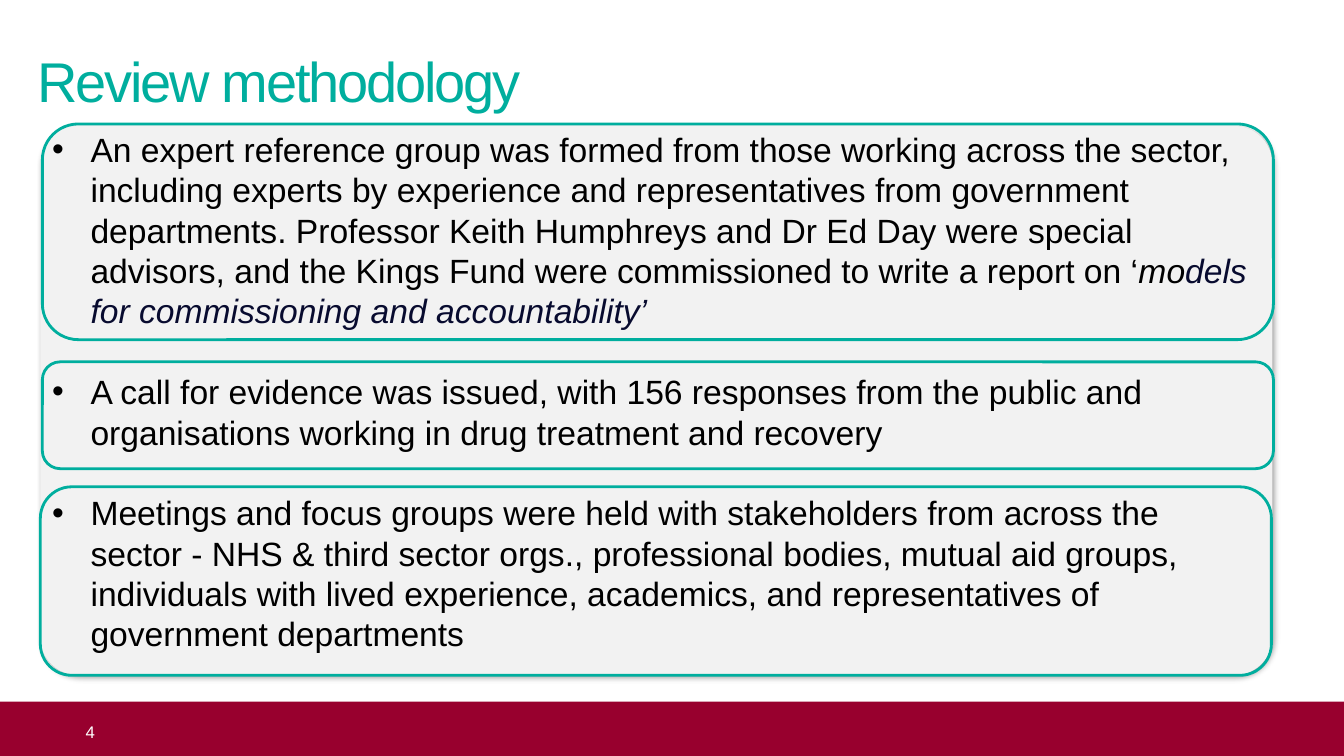
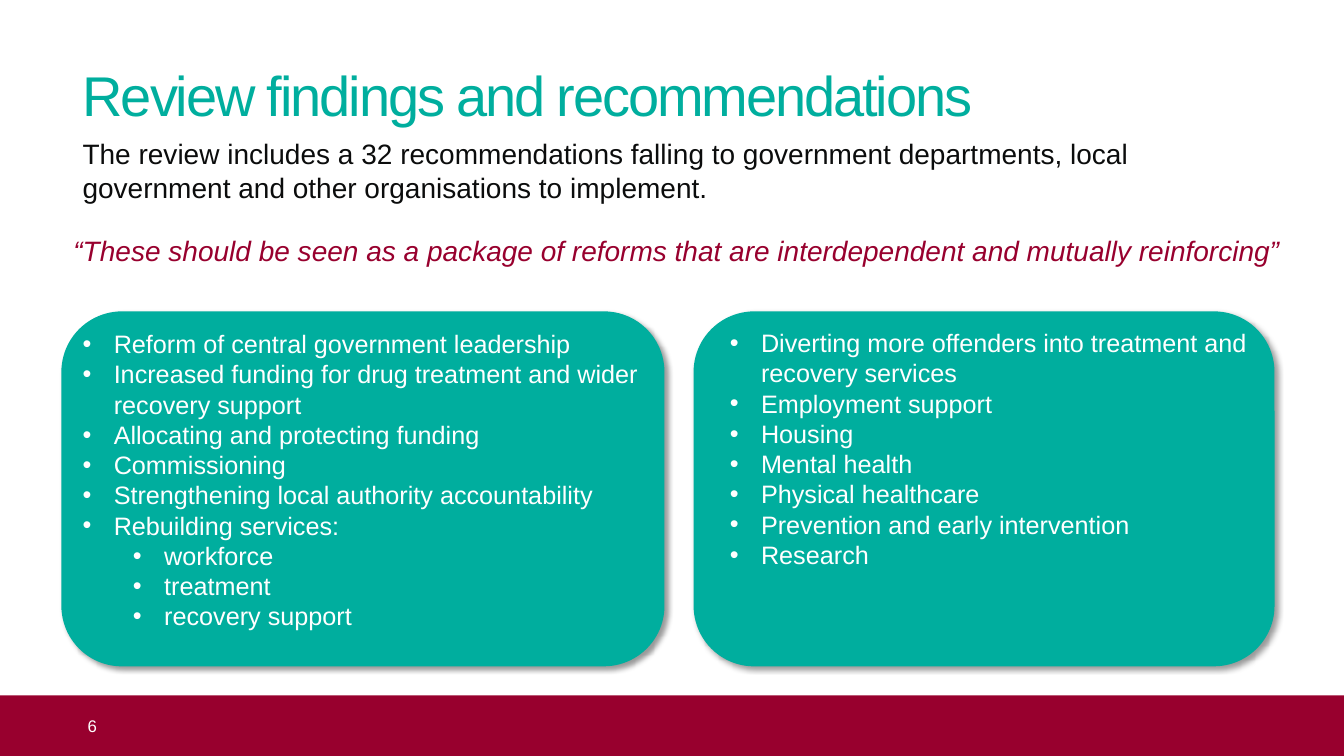
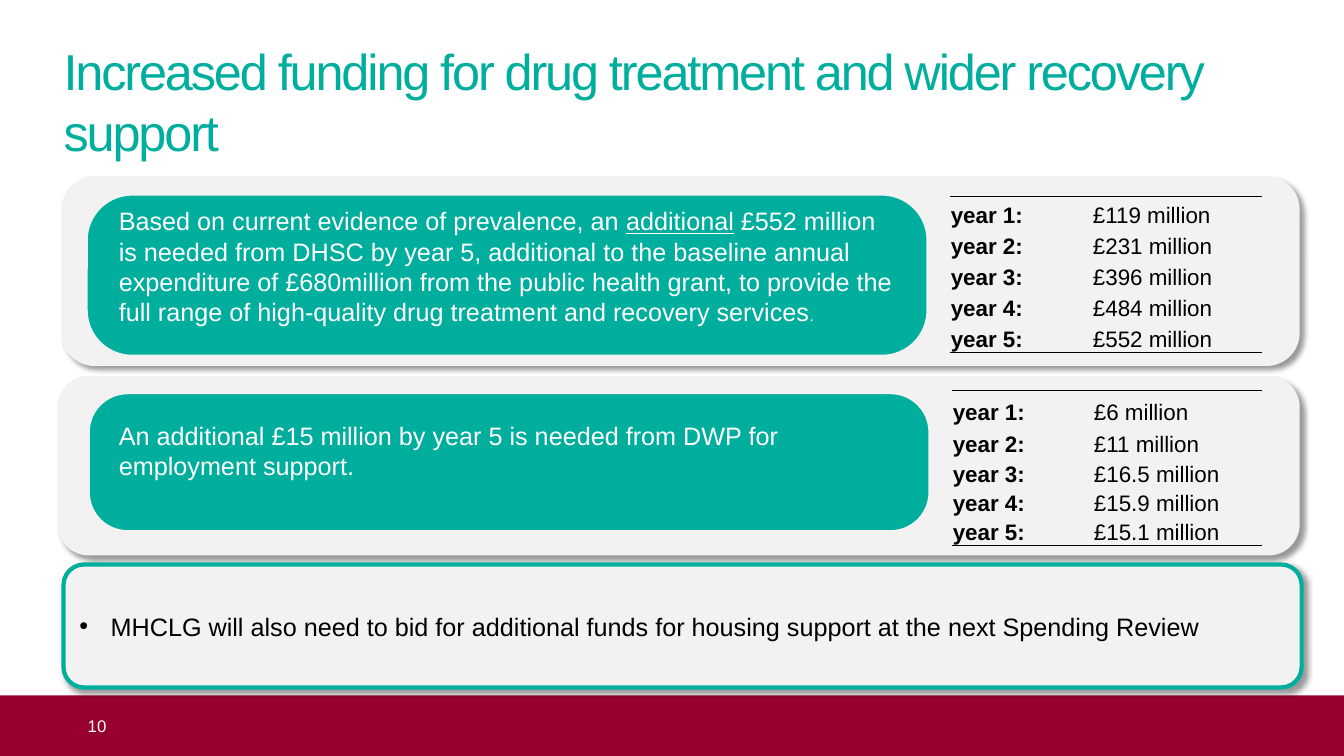
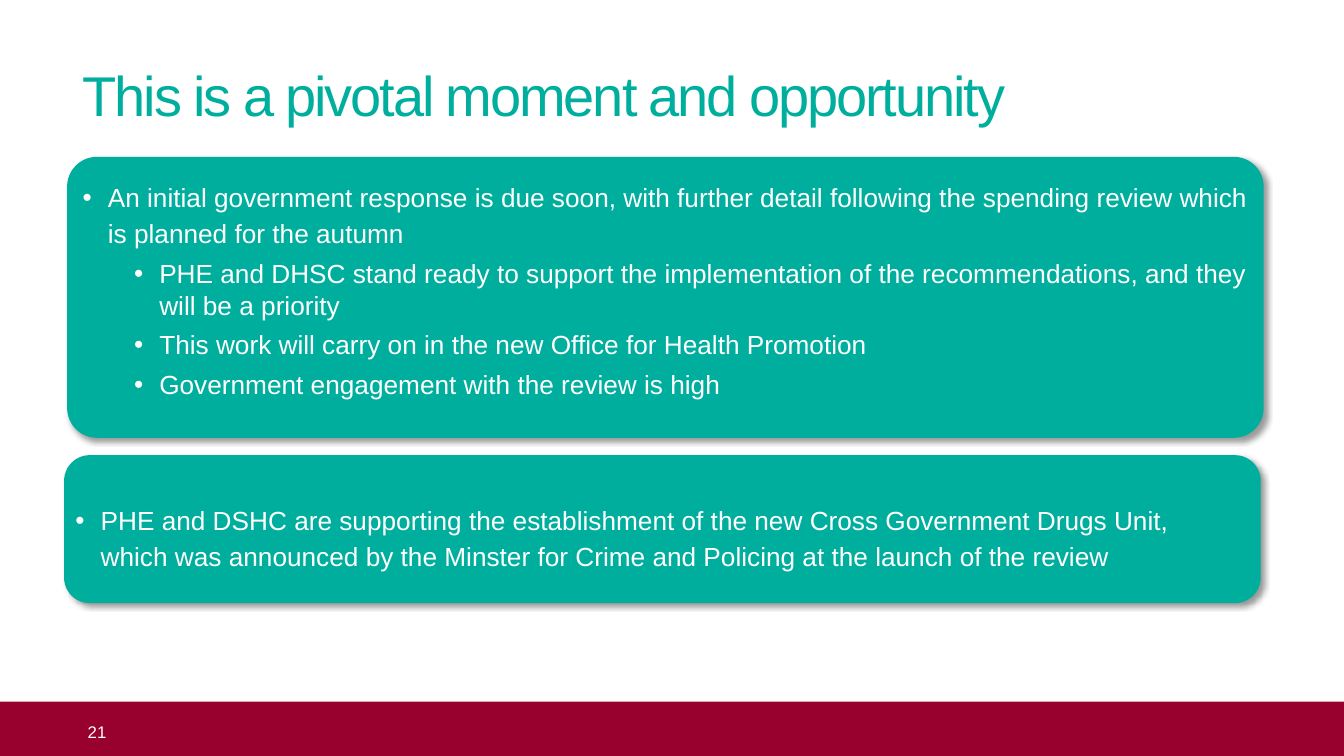
from dataclasses import dataclass
from typing import Optional, Sequence

from pptx import Presentation
from pptx.dml.color import RGBColor
from pptx.enum.shapes import MSO_SHAPE as Preset
from pptx.enum.text import MSO_ANCHOR as Anchor
from pptx.oxml.ns import qn
from pptx.oxml.xmlchemy import OxmlElement as new_element
from pptx.util import Emu, Pt

# Shared look; lengths are px, 100 to the inch
EMU_PER_PX = 9144
PAGE_WIDTH, PAGE_HEIGHT = 1333, 750
FONT = "Arial"
TEAL = RGBColor(0x00, 0xAE, 0x9E)
CRIMSON = RGBColor(0x98, 0x00, 0x2E)
PALE = RGBColor(0xF2, 0xF2, 0xF2)
WHITE = RGBColor(0xFF, 0xFF, 0xFF)
BLACK = RGBColor(0x00, 0x00, 0x00)
INK = RGBColor(0x0B, 0x0C, 0x0C)
NAVY = RGBColor(0x08, 0x0B, 0x2F)
DEFAULT_ROUNDING = 0.1667
TEXT_INSETS = (10, 5, 10, 5)
NO_INSETS = (0, 0, 0, 0)


@dataclass(frozen=True)
class Box:
    left: int
    top: int
    width: int
    height: int


@dataclass(frozen=True)
class Span:
    text: str
    color: Optional[RGBColor] = None
    size: Optional[float] = None
    bold: bool = False
    italic: bool = False
    underline: bool = False
    tracking: float = 0


@dataclass(frozen=True)
class Para:
    spans: Sequence[Span]
    size: float
    color: RGBColor
    indent: int = 0
    hanging: int = 0
    level: int = 0
    before: float = 0
    spacing: Optional[float] = None


@dataclass(frozen=True)
class Panel:
    box: Box
    fill: Optional[RGBColor] = None
    line: Optional[RGBColor] = None
    weight: float = 3
    rounding: float = DEFAULT_ROUNDING
    shadow: bool = False


def px(length: int) -> Emu:
    return Emu(length * EMU_PER_PX)


def place(box: Box) -> tuple:
    return px(box.left), px(box.top), px(box.width), px(box.height)


def child(parent, tag: str, **attributes):
    element = new_element(tag)
    for name, value in attributes.items():
        element.set(name, str(value))
    parent.append(element)
    return element


# Text
def write(frame, paras: Sequence[Para], insets=TEXT_INSETS, anchor=Anchor.TOP) -> None:
    frame.word_wrap = True
    frame.vertical_anchor = anchor
    (frame.margin_left, frame.margin_top,
     frame.margin_right, frame.margin_bottom) = map(px, insets)
    for index, para in enumerate(paras):
        target = frame.paragraphs[0] if index == 0 else frame.add_paragraph()
        write_para(target, para)


def write_para(target, para: Para) -> None:
    target.level = para.level
    target.space_before = Pt(para.before)
    if para.spacing:
        target.line_spacing = para.spacing
    properties = target._p.get_or_add_pPr()
    properties.set("algn", "l")
    properties.set("marL", str(px(para.indent)))
    properties.set("indent", str(-px(para.hanging)))
    if para.hanging:
        child(properties, "a:buFont", typeface=FONT)
        child(properties, "a:buChar", char="•")
    for span in para.spans:
        run = target.add_run()
        run.text = span.text
        font = run.font
        font.name = FONT
        font.size = Pt(span.size or para.size)
        font.color.rgb = span.color or para.color
        font.bold, font.italic, font.underline = span.bold, span.italic, span.underline
        if span.tracking:
            run._r.get_or_add_rPr().set("spc", str(round(span.tracking * 100)))


def add_text(page, box: Box, paras: Sequence[Para], insets=TEXT_INSETS,
             anchor=Anchor.TOP) -> None:
    write(page.shapes.add_textbox(*place(box)).text_frame, paras, insets, anchor)


# Shapes
def add_shadow(shape) -> None:
    effects = shape._element.spPr.find(qn("a:effectLst"))
    outer = child(effects, "a:outerShdw", blurRad=Pt(4), dist=Pt(3),
                  dir=45 * 60000, algn="tl", rotWithShape=0)
    child(child(outer, "a:srgbClr", val=BLACK), "a:alpha", val=40000)


def add_panel(page, panel: Panel):
    shape = page.shapes.add_shape(Preset.ROUNDED_RECTANGLE, *place(panel.box))
    shape.adjustments[0] = panel.rounding
    if panel.fill is None:
        shape.fill.background()
    else:
        shape.fill.solid()
        shape.fill.fore_color.rgb = panel.fill
    if panel.line is None:
        shape.line.fill.background()
    else:
        shape.line.color.rgb = panel.line
        shape.line.width = Pt(panel.weight)
    shape.shadow.inherit = False
    if panel.shadow:
        add_shadow(shape)
    return shape


def add_title(page, text: str, left: int = 82, top: int = 60, size: float = 40) -> None:
    title = Para([Span(text, tracking=-1.5)], size, TEAL)
    add_text(page, Box(left, top, 1171, 71), [title], NO_INSETS)


def add_footer(page, number: int, top: int = 690, left: int = 0) -> None:
    band = page.shapes.add_shape(
        Preset.RECTANGLE, *place(Box(left, top, PAGE_WIDTH - 2 * left, 60)))
    band.fill.solid()
    band.fill.fore_color.rgb = CRIMSON
    band.line.fill.background()
    band.shadow.inherit = False
    write(band.text_frame, [Para([Span(str(number))], 12, WHITE, indent=87)],
          (0, 0, 10, 0), Anchor.MIDDLE)


# Funding tables
def set_borders(cell, ruled: Sequence[str]) -> None:
    properties = cell._tc.get_or_add_tcPr()
    for side in "LRTB":
        line = child(properties, f"a:ln{side}", w=Pt(1))
        if side in ruled:
            child(child(line, "a:solidFill"), "a:srgbClr", val=BLACK)
        else:
            child(line, "a:noFill")


def add_funding_table(page, box: Box, first_column: int, row_heights: Sequence[int],
                      amounts: Sequence[str]) -> None:
    table = page.shapes.add_table(len(amounts), 2, *place(box)).table
    table.first_row = table.horz_banding = False
    for column, width in zip(table.columns, (first_column, box.width - first_column)):
        column.width = px(width)
    last = len(amounts) - 1
    for index, (amount, height) in enumerate(zip(amounts, row_heights)):
        table.rows[index].height = px(height)
        ruled = ("T" if index == 0 else "") + ("B" if index == last else "")
        spans = Span(f"year {index + 1}:", bold=True), Span(f"£{amount} million")
        for column, span in enumerate(spans):
            cell = table.cell(index, column)
            set_borders(cell, ruled)
            cell.fill.solid()
            cell.fill.fore_color.rgb = PALE
            cell.vertical_anchor = Anchor.BOTTOM
            cell.margin_left = cell.margin_top = cell.margin_right = px(1)
            cell.margin_bottom = 0
            write_para(cell.text_frame.paragraphs[0], Para([span], 16, BLACK))


# Slides
def build_methodology(page) -> None:
    add_title(page, "Review methodology", left=37, top=46)
    add_footer(page, 4, top=696, left=-2)
    add_panel(page, Panel(Box(40, 125, 1222, 545), PALE, rounding=0.069, shadow=True))
    for left, top, height in ((42, 123, 214), (42, 359, 106), (40, 483, 187)):
        add_panel(page, Panel(Box(left, top, 1221, height), line=TEAL, weight=2))
    points = (
        [Span("An expert reference group was formed from those working across the "
              "sector, including experts by experience and representatives from "
              "government departments. Professor Keith Humphreys and Dr Ed Day were "
              "special advisors, and the Kings Fund were commissioned to write a "
              "report on ‘"),
         Span("mo", italic=True),
         Span("dels for commissioning and accountability’", NAVY, italic=True)],
        [Span("A call for evidence was issued, with 156 responses from the public "
              "and organisations working in drug treatment and recovery")],
        [Span("Meetings and focus groups were held with stakeholders from across the "
              "sector - NHS & third sector orgs., professional bodies, mutual aid "
              "groups, individuals with lived experience, academics, and "
              "representatives of government departments")],
    )
    add_text(page, Box(42, 123, 1213, 547), [
        Para(spans, 24, BLACK, indent=38, hanging=38, before=29 if index else 0)
        for index, spans in enumerate(points)])


def build_findings(page) -> None:
    for left, width in ((63, 594), (690, 572)):
        add_panel(page, Panel(Box(left, 311, width, 348), TEAL, TEAL, shadow=True))
    add_title(page, "Review findings and recommendations")
    add_footer(page, 6)
    add_text(page, Box(72, 131, 1199, 80), [Para([Span(
        "The review includes a 32 recommendations falling to government departments, "
        "local government and other organisations to implement.")], 20, INK)])
    add_text(page, Box(63, 227, 1270, 44), [Para([Span(
        "“These should be seen as a package of reforms that are interdependent and "
        "mutually reinforcing”", italic=True)], 20, CRIMSON)])

    def listed(text: str, level: int = 1) -> Para:
        return Para([Span(text)], 18, WHITE, indent=31 + 50 * level, hanging=31,
                    level=level)

    reforms = ("Reform of central government leadership",
               "Increased funding for drug treatment and wider recovery support",
               "Allocating and protecting funding", "Commissioning",
               "Strengthening local authority accountability", "Rebuilding services:")
    services = "workforce", "treatment", "recovery support"
    support = ("Diverting more offenders into treatment and recovery services",
               "Employment support", "Housing", "Mental health",
               "Physical healthcare", "Prevention and early intervention", "Research")
    add_text(page, Box(22, 321, 655, 313),
             [listed(text) for text in reforms] + [listed(text, 2) for text in services])
    add_text(page, Box(664, 320, 667, 253), [listed(text) for text in support])


def build_funding(page) -> None:
    for box in (Box(63, 177, 1224, 184), Box(59, 375, 1228, 174)):
        add_panel(page, Panel(box, PALE, PALE, shadow=True))
    add_title(page, "Increased funding for drug treatment and wider recovery support",
              left=63, top=40, size=36)
    add_footer(page, 10)
    for box in (Box(85, 192, 836, 162), Box(87, 389, 836, 139)):
        add_panel(page, Panel(box, TEAL, PALE, rounding=0.285))
    add_text(page, Box(108, 199, 794, 162), [Para([
        Span("Based on current evidence of prevalence, an "),
        Span("additional", underline=True),
        Span(" £552 million is needed from DHSC by year 5, additional to the baseline "
             "annual expenditure of £680million from the public health grant, to "
             "provide the full range of high-quality drug treatment and recovery "
             "services"),
        Span(".", size=11)], 18, WHITE)])
    add_text(page, Box(108, 411, 812, 71), [Para([Span(
        "An additional £15 million by year 5 is needed from DWP for employment "
        "support.")], 18, WHITE)], anchor=Anchor.MIDDLE)
    add_funding_table(page, Box(942, 195, 310, 155), 141, [31] * 5,
                      ("119", "231", "396", "484", "552"))
    add_funding_table(page, Box(944, 387, 308, 154), 140, (35, 32, 29, 29, 29),
                      ("6", "11", "16.5", "15.9", "15.1"))
    housing = add_panel(page, Panel(Box(63, 560, 1228, 122), PALE, TEAL, shadow=True))
    write(housing.text_frame, [Para([Span(
        "MHCLG will also need to bid for additional funds for housing support at the "
        "next Spending Review")], 18, BLACK, indent=31, hanging=31)],
        anchor=Anchor.MIDDLE)


def build_opportunity(page) -> None:
    for box, rounding in ((Box(65, 453, 1184, 144), DEFAULT_ROUNDING),
                          (Box(68, 157, 1184, 276), 0.102)):
        add_panel(page, Panel(box, TEAL, TEAL, 2, rounding, shadow=True))
    add_title(page, "This is a pivotal moment and opportunity")
    add_footer(page, 21, top=696)

    def main_point(text: str) -> Para:
        return Para([Span(text)], 18.7, WHITE, indent=25, hanging=25, spacing=1.14)

    details = ("PHE and DHSC stand ready to support the implementation of the "
               "recommendations, and they will be a priority",
               "This work will carry on in the new Office for Health Promotion",
               "Government engagement with the review is high")
    response = main_point("An initial government response is due soon, with further "
                          "detail following the spending review which is planned for "
                          "the autumn")
    add_text(page, Box(82, 176, 1171, 239), [response] + [
        Para([Span(text)], 18.7, WHITE, indent=76, hanging=25, level=1, before=6)
        for text in details], NO_INSETS)
    add_text(page, Box(65, 491, 1121, 79), [main_point(
        "PHE and DSHC are supporting the establishment of the new Cross Government "
        "Drugs Unit, which was announced by the Minster for Crime and Policing at the "
        "launch of the review")])


def main() -> None:
    deck = Presentation()
    deck.slide_width, deck.slide_height = px(PAGE_WIDTH), px(PAGE_HEIGHT)
    blank = deck.slide_layouts[6]
    for build in (build_methodology, build_findings, build_funding, build_opportunity):
        build(deck.slides.add_slide(blank))
    deck.save("out.pptx")


if __name__ == "__main__":
    main()
